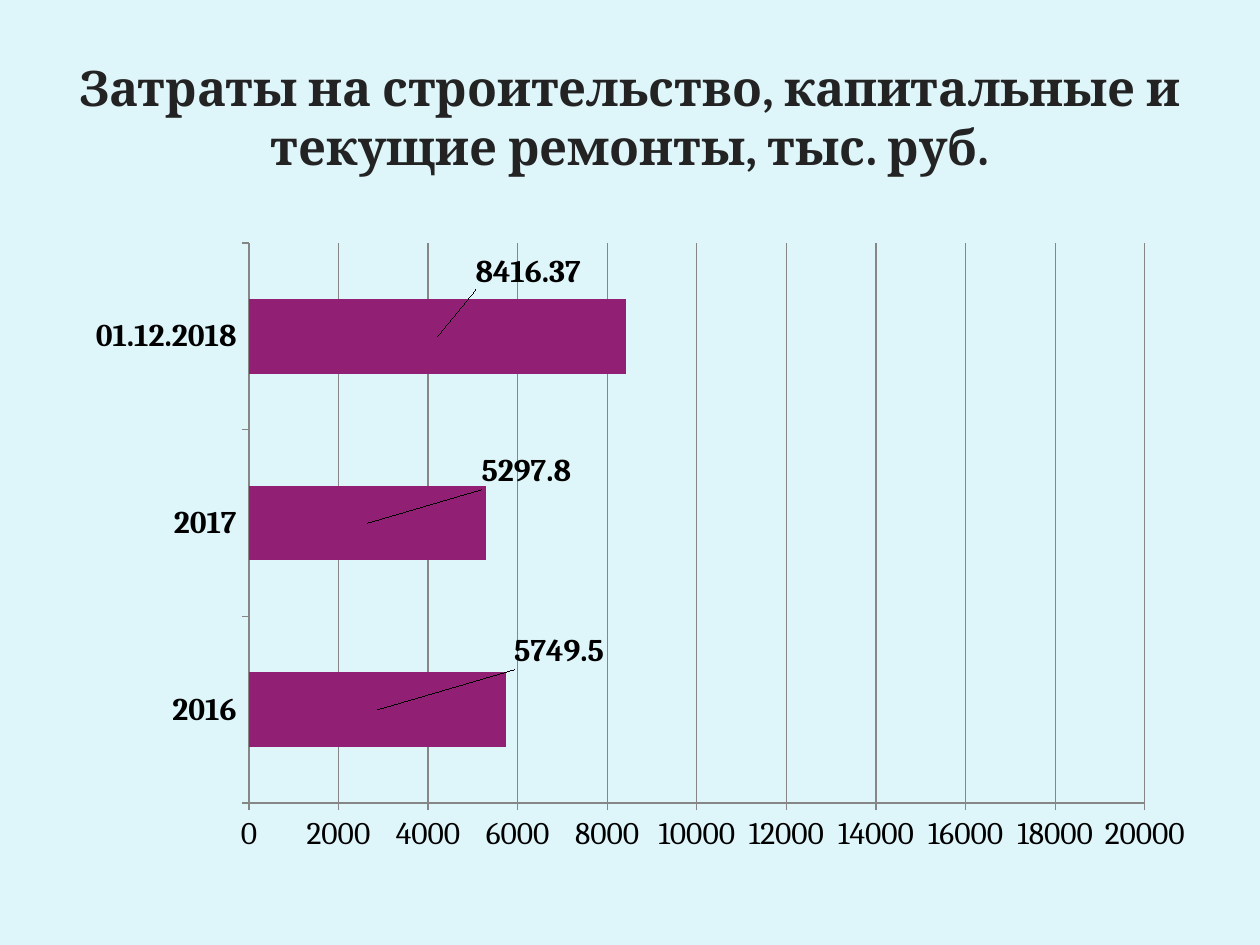
import pptx
import pptx.chart.data
import pptx.dml.color
import pptx.enum.chart
import pptx.enum.text
import pptx.oxml
import pptx.oxml.ns
import pptx.util
from pptx.util import Inches

COLORS = {
    "background": "DEF5FA",
    "title": "232323",
    "text": "000000",
    "bar": "911F73",
    "axis": "868686",
}
FONT = "Cambria"
TITLE = "Затраты на строительство, капитальные и текущие ремонты, тыс. руб."
COSTS = {"2016": 5749.5, "2017": 5297.8, "01.12.2018": 8416.37}
LABEL_OFFSETS = [(0.16, -0.09), (0.14, -0.08), (0.08, -0.1)]
PLOT_AREA = {"x": 0.164, "y": 0.035, "w": 0.79, "h": 0.863}


def rgb(name):
    return pptx.dml.color.RGBColor.from_string(COLORS[name])


def style_font(font, size, color, bold):
    font.name = FONT
    font.size = pptx.util.Pt(size)
    font.bold = bold
    font.color.rgb = rgb(color)


def manual_layout(values, inner=False):
    """Return a c:layout element, given in fractions of the chart."""
    settings = []
    if inner:
        settings = [("layoutTarget", "inner"), ("xMode", "edge"), ("yMode", "edge")]
    settings += values.items()
    children = "".join(f'<c:{tag} val="{value}"/>' for tag, value in settings)
    return pptx.oxml.parse_xml(
        f'<c:layout {pptx.oxml.ns.nsdecls("c")}>'
        f"<c:manualLayout>{children}</c:manualLayout></c:layout>"
    )


def add_title(slide):
    title = slide.shapes.add_textbox(Inches(0.5), Inches(0.3), Inches(9), Inches(1.25))
    frame = title.text_frame
    frame.word_wrap = True
    frame.vertical_anchor = pptx.enum.text.MSO_ANCHOR.MIDDLE
    frame.text = TITLE
    paragraph = frame.paragraphs[0]
    paragraph.alignment = pptx.enum.text.PP_ALIGN.CENTER
    style_font(paragraph.runs[0].font, 28, "title", True)


def style_axis(axis, bold):
    axis.major_tick_mark = pptx.enum.chart.XL_TICK_MARK.OUTSIDE
    axis.minor_tick_mark = pptx.enum.chart.XL_TICK_MARK.NONE
    axis.format.line.color.rgb = rgb("axis")
    style_font(axis.tick_labels.font, 18, "text", bold)


def label_bars(chart, series):
    labels = series.data_labels
    labels.show_value = True
    style_font(labels.font, 18, "text", True)
    for index in range(len(LABEL_OFFSETS)):
        style_font(series.points[index].data_label.font, 18, "text", True)
    for label, (x, y) in zip(chart.element.xpath(".//c:dLbl"), LABEL_OFFSETS):
        label.insert(1, manual_layout({"x": x, "y": y}))


def add_cost_chart(slide):
    costs = pptx.chart.data.CategoryChartData()
    costs.categories = list(COSTS)
    costs.add_series("Series 1", list(COSTS.values()))
    chart = slide.shapes.add_chart(
        pptx.enum.chart.XL_CHART_TYPE.BAR_STACKED,
        Inches(0.5), Inches(1.75), Inches(9), Inches(5.15), costs,
    ).chart
    chart.has_title = False
    chart.has_legend = False
    style_font(chart.font, 18, "text", False)

    style_axis(chart.category_axis, True)
    value_axis = chart.value_axis
    style_axis(value_axis, False)
    value_axis.minimum_scale = 0
    value_axis.maximum_scale = 20000
    value_axis.major_unit = 2000
    value_axis.has_major_gridlines = True
    value_axis.major_gridlines.format.line.color.rgb = rgb("axis")

    plot = chart.plots[0]
    plot.gap_width = 150
    plot.overlap = 100
    plot.vary_by_categories = False
    series = plot.series[0]
    series.format.fill.solid()
    series.format.fill.fore_color.rgb = rgb("bar")
    label_bars(chart, series)

    plot_area = chart.element.xpath(".//c:plotArea")[0]
    for layout in plot_area.xpath("./c:layout"):
        plot_area.remove(layout)
    plot_area.insert(0, manual_layout(PLOT_AREA, inner=True))


def main():
    presentation = pptx.Presentation()
    presentation.slide_width = Inches(10)
    presentation.slide_height = Inches(7.5)
    slide = presentation.slides.add_slide(presentation.slide_layouts[6])
    slide.background.fill.solid()
    slide.background.fill.fore_color.rgb = rgb("background")
    add_cost_chart(slide)
    add_title(slide)
    presentation.save("out.pptx")


if __name__ == "__main__":
    main()
